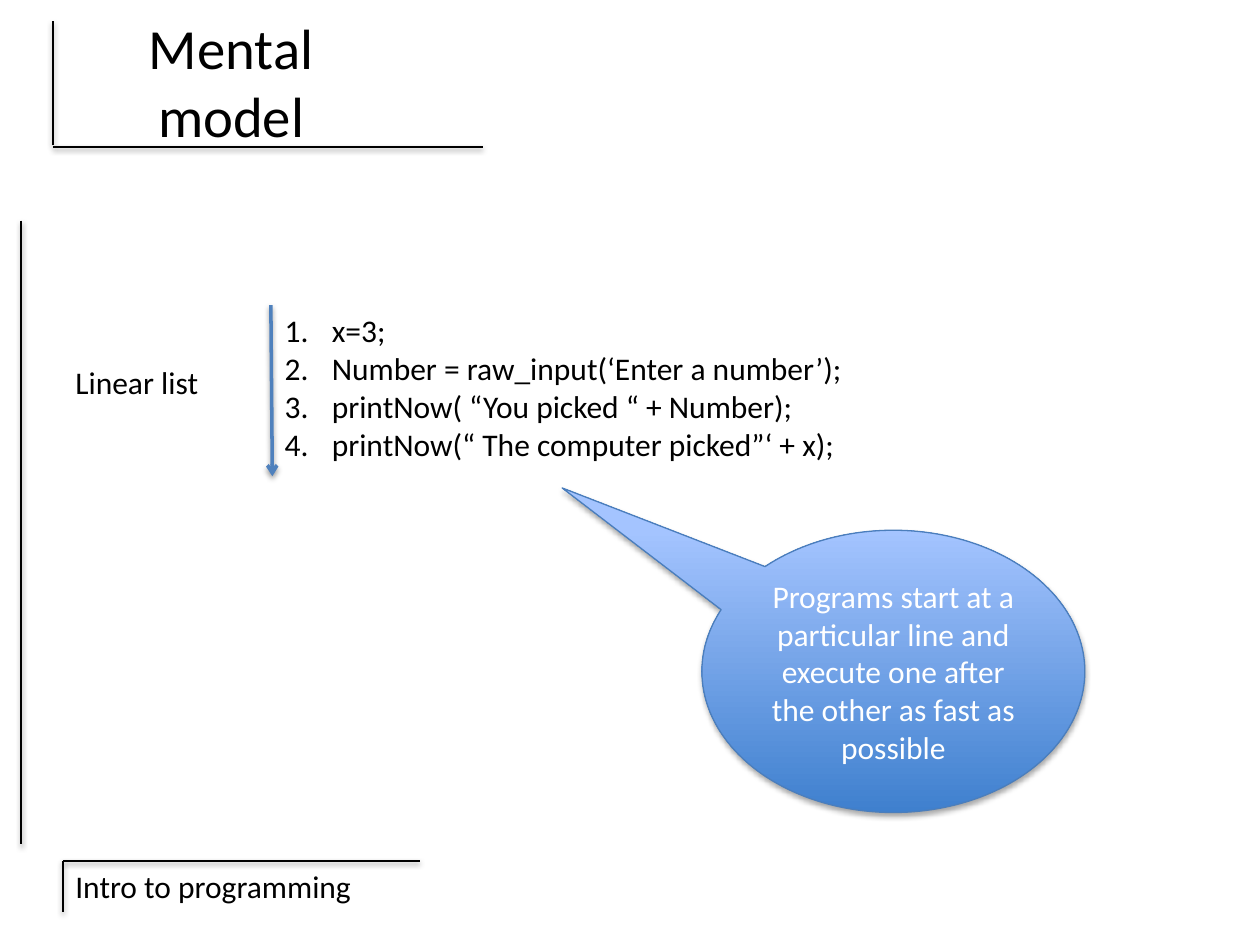
from lxml import etree
from pptx import Presentation
from pptx import util as u
from pptx.dml.color import RGBColor
from pptx.enum import shapes, text
from pptx.oxml.ns import qn

FONT = "Calibri"
BLACK, WHITE, BLUE = "000000", "FFFFFF", "4F81BD"


def color(hex_code):
    return RGBColor.from_string(hex_code)


def add_shadow(sp, alpha, dist):
    """Soft shadow straight below a shape or line."""
    sp_pr = sp._element.spPr
    for old in sp_pr.findall(qn("a:effectLst")):
        sp_pr.remove(old)
    effects = etree.SubElement(sp_pr, qn("a:effectLst"))
    shadow = etree.SubElement(effects, qn("a:outerShdw"), blurRad=str(u.Pt(3.1)),
                              dist=str(u.Pt(dist)), dir="5400000", rotWithShape="0")
    rgb = etree.SubElement(shadow, qn("a:srgbClr"), val=BLACK)
    etree.SubElement(rgb, qn("a:alpha"), val=str(alpha * 1000))


def add_line(s, x1, y1, x2, y2, hex_code=BLACK, width=1, arrow=False):
    ln = s.shapes.add_connector(shapes.MSO_CONNECTOR.STRAIGHT,
                                u.Cm(x1), u.Cm(y1), u.Cm(x2), u.Cm(y2))
    ln.line.color.rgb = color(hex_code)
    ln.line.width = u.Pt(width)
    if arrow:
        etree.SubElement(ln.line._get_or_add_ln(), qn("a:tailEnd"), type="arrow")
    add_shadow(ln, 38, 1.6)


def add_run(p, words, size=18, hex_code=BLACK):
    r = p.add_run()
    r.text = words
    r.font.size = u.Pt(size)
    r.font.name = FONT
    r.font.color.rgb = color(hex_code)


def add_text(s, x, y, w, h, wrap=True):
    tf = s.shapes.add_textbox(u.Cm(x), u.Cm(y), u.Cm(w), u.Cm(h)).text_frame
    tf.word_wrap = wrap
    return tf


def add_title(s, x, y, w, h):
    # Corner rule
    add_line(s, x + w, y + h, x, y + h)
    add_line(s, x, y, x, y + h - 0.04)
    # Heading
    tf = add_text(s, x + 0.2, y, 6.78, 2.41)
    tf.vertical_anchor = text.MSO_ANCHOR.MIDDLE
    p = tf.paragraphs[0]
    p.alignment = text.PP_ALIGN.CENTER
    add_run(p, "Mental model", 32.4)


def add_footer(s, x, y, w, h):
    add_line(s, x + w, y, x, y)
    add_line(s, x, y, x, y + h)
    add_run(add_text(s, x, y, 6.15, 1.02).paragraphs[0], "Intro to programming")


def add_program(s, x, y, w, h):
    # Numbered code lines
    code = ["x=3;",
            "Number = raw_input(‘Enter a number’);",
            "printNow( “You picked “ + Number);",
            "printNow(“ The computer picked”‘ + x);"]
    tf = add_text(s, x, y, w, h)
    for i, words in enumerate(code):
        p = tf.add_paragraph() if i else tf.paragraphs[0]
        p_pr = p._p.get_or_add_pPr()
        p_pr.set("marL", str(u.Cm(0.95)))
        p_pr.set("indent", str(-u.Cm(0.95)))
        etree.SubElement(p_pr, qn("a:buFont"), typeface="+mj-lt")
        etree.SubElement(p_pr, qn("a:buAutoNum"), type="arabicPeriod")
        add_run(p, words)
    # Reading direction
    add_line(s, x - 0.03, y, x, y + 3.45, BLUE, 2, arrow=True)
    # Label
    tf = add_text(s, x - 4.22, y + 1.04, 3.02, 1.02, wrap=False)
    add_run(tf.paragraphs[0], "Linear list")


def add_callout(s, x, y, w, h):
    sp = s.shapes.add_shape(shapes.MSO_SHAPE.OVAL_CALLOUT,
                            u.Cm(x), u.Cm(y), u.Cm(w), u.Cm(h))
    sp.adjustments[0], sp.adjustments[1] = -0.865, -0.65
    # Gradient from dark at the bottom to light at the top
    sp.fill.gradient()
    sp.fill.gradient_angle = 90
    for stop, position, code in zip(sp.fill.gradient_stops, (0, 1), ("3F80CE", "A4C4FF")):
        stop.position = position
        stop.color.rgb = color(code)
    sp.line.color.rgb = color("4B7EBC")
    sp.line.width = u.Pt(0.75)
    sp.shadow.inherit = False
    add_shadow(sp, 35, 1.8)
    # Remark
    tf = sp.text_frame
    tf.word_wrap = True
    tf.vertical_anchor = text.MSO_ANCHOR.MIDDLE
    p = tf.paragraphs[0]
    p.alignment = text.PP_ALIGN.CENTER
    add_run(p, "Programs start at a particular line and execute one after "
               "the other as fast as possible", hex_code=WHITE)


def main():
    prs = Presentation()
    prs.slide_width, prs.slide_height = u.Cm(25.4), u.Cm(19.05)
    s = prs.slides.add_slide(prs.slide_layouts[6])
    add_footer(s, 1.27, 17.35, 7.19, 1.04)
    add_line(s, 0.43, 4.45, 0.43, 17.02)  # left margin rule
    add_title(s, 1.07, 0.43, 8.66, 2.53)
    add_program(s, 5.49, 6.15, 14.1, 4.11)
    add_callout(s, 14.15, 10.69, 7.72, 5.69)
    prs.save("out.pptx")


if __name__ == "__main__":
    main()
